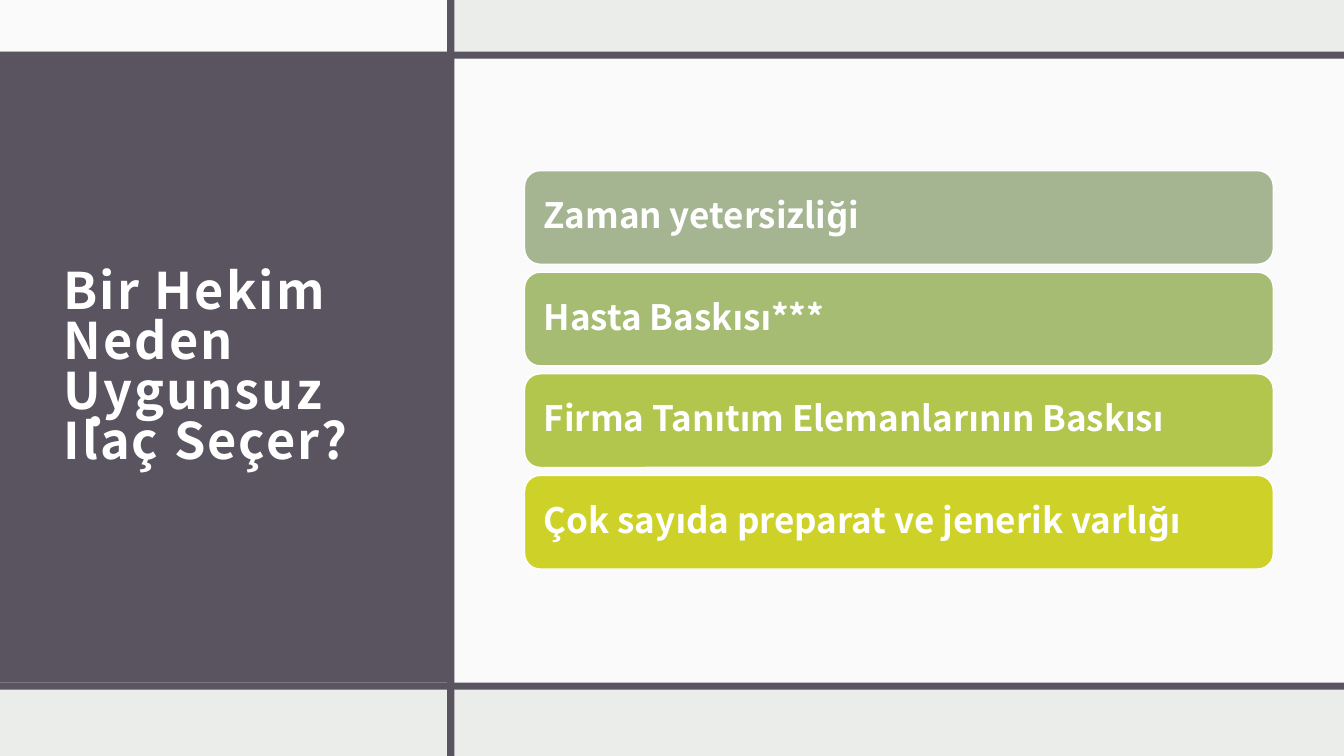
import dataclasses

import lxml.etree
import pptx
import pptx.dml.color
import pptx.enum.shapes
import pptx.enum.text
import pptx.oxml.ns
import pptx.util

Cm = pptx.util.Cm
Pt = pptx.util.Pt
KIND = pptx.enum.shapes.MSO_SHAPE
ALIGN = pptx.enum.text.PP_ALIGN
ANCHOR = pptx.enum.text.MSO_ANCHOR

FONT = "Noto Sans CJK JP"
COLORS = {
    "back": "EBEDEB",
    "dark": "595460",
    "white": "FFFFFF",
    "sage": "A5B592",
    "moss": "A5BC72",
    "lime": "B2C64D",
    "lemon": "CED228",
}
WIDE, HIGH = 33.87, 19.05
RULE = 0.18
BAR_LEFT, BAR_TOP, BAR_WIDE, BAR_HIGH = 13.22, 4.3, 18.87, 2.36
BAR_STEP = 2.56


@dataclasses.dataclass
class Panel:
    left: float
    top: float
    wide: float
    high: float
    color: str
    alpha: int = 100


@dataclasses.dataclass
class Bar:
    text: str
    color: str


BACK = [
    Panel(0, 0, WIDE, HIGH, "back"),
    Panel(0, 1.3, 11.27, 15.9, "dark"),
]
FRAME = [
    Panel(0, 0, 11.27, 1.4, "white", 75),
    Panel(11.45, 1.48, 22.42, 15.8, "white", 75),
    Panel(0, 17.2, WIDE, RULE, "dark"),
    Panel(11.27, 0, RULE, HIGH, "dark"),
    Panel(0, 1.3, WIDE, RULE, "dark"),
]
BARS = [
    Bar("Zaman yetersizliği", "sage"),
    Bar("Hasta Baskısı***", "moss"),
    Bar("Firma Tanıtım Elemanlarının Baskısı", "lime"),
    Bar("Çok sayıda preparat ve jenerik varlığı", "lemon"),
]


def get_color(name: str) -> pptx.dml.color.RGBColor:
    return pptx.dml.color.RGBColor.from_string(COLORS[name])


def add_panel(slide, panel: Panel, kind=KIND.RECTANGLE):
    shape = slide.shapes.add_shape(
        kind, Cm(panel.left), Cm(panel.top), Cm(panel.wide), Cm(panel.high)
    )
    shape.shadow.inherit = False
    shape.fill.solid()
    shape.fill.fore_color.rgb = get_color(panel.color)
    shape.line.fill.background()
    if panel.alpha < 100:
        tone = shape.element.spPr.find(".//" + pptx.oxml.ns.qn("a:srgbClr"))
        alpha = lxml.etree.SubElement(tone, pptx.oxml.ns.qn("a:alpha"))
        alpha.set("val", str(panel.alpha * 1000))
    return shape


def set_text(shape, text: str, size: float, space: float, inset: float):
    """Write one left-aligned, bold white paragraph and return it."""
    frame = shape.text_frame
    frame.text = text
    frame.word_wrap = True
    frame.auto_size = pptx.enum.text.MSO_AUTO_SIZE.NONE
    frame.vertical_anchor = ANCHOR.MIDDLE
    frame.margin_left = frame.margin_right = Cm(inset)
    frame.margin_top = frame.margin_bottom = Cm(0.25)
    line = frame.paragraphs[0]
    line.alignment = ALIGN.LEFT
    line.line_spacing = space
    line.font.name = FONT
    line.font.size = Pt(size)
    line.font.bold = True
    line.font.color.rgb = get_color("white")
    return line


def add_title(slide) -> None:
    title = slide.shapes.title
    title.left, title.top = Cm(1.3), Cm(3.33)
    title.width, title.height = Cm(8.66), Cm(11.96)
    line = set_text(title, "Bir Hekim Neden Uygunsuz İlaç Seçer?", 36, 0.83, 0.3)
    for props in line.runs[0].font, line.font:
        props.language_id = pptx.enum.lang.MSO_LANGUAGE_ID.TURKISH
    for mark in title.element.iter(
        pptx.oxml.ns.qn("a:rPr"), pptx.oxml.ns.qn("a:defRPr")
    ):
        mark.set("spc", "150")
    # Bring the title in front of the dark panel
    title.element.getparent().append(title.element)


def add_bar(slide, index: int, bar: Bar) -> None:
    top = BAR_TOP + index * BAR_STEP
    panel = Panel(BAR_LEFT, top, BAR_WIDE, BAR_HIGH, bar.color)
    shape = add_panel(slide, panel, KIND.ROUNDED_RECTANGLE)
    shape.line.color.rgb = get_color("white")
    shape.line.width = Pt(1)
    set_text(shape, bar.text, 25, 0.9, 0.37)


def main() -> None:
    deck = pptx.Presentation()
    deck.slide_width, deck.slide_height = Cm(WIDE), Cm(HIGH)
    slide = deck.slides.add_slide(deck.slide_layouts.get_by_name("Title Only"))
    slide.background.fill.solid()
    slide.background.fill.fore_color.rgb = get_color("back")
    for panel in BACK:
        add_panel(slide, panel)
    add_title(slide)
    for panel in FRAME:
        add_panel(slide, panel)
    for index, bar in enumerate(BARS):
        add_bar(slide, index, bar)
    deck.save("out.pptx")


if __name__ == "__main__":
    main()
